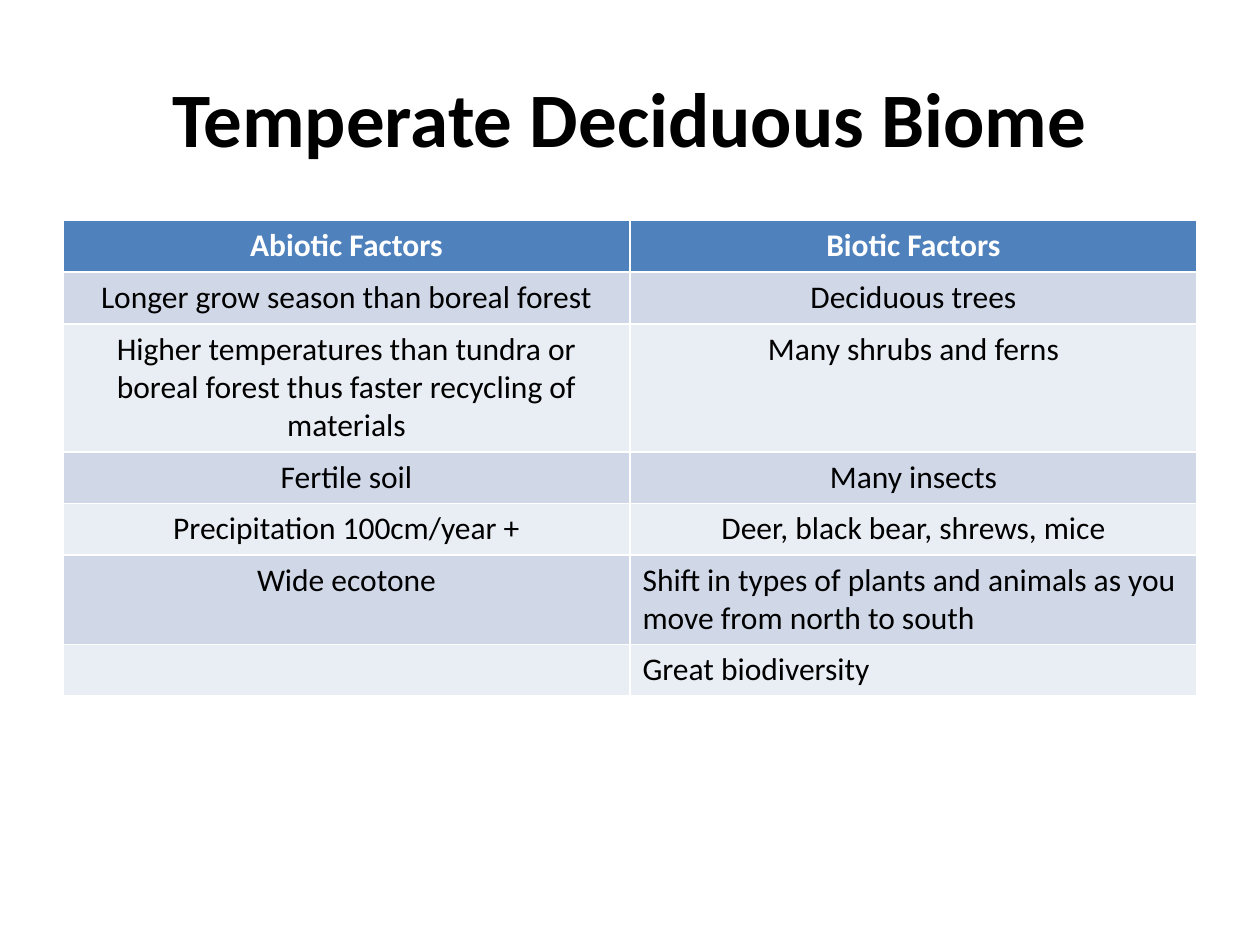
from pptx import Presentation
from pptx.dml.color import RGBColor
from pptx.enum.text import MSO_ANCHOR, PP_ALIGN
from pptx.util import Inches, Pt

TITLE = "Temperate Deciduous Biome"
HEADER = ("Abiotic Factors", "Biotic Factors")
FACTORS = [
    ("Longer grow season than boreal forest", "Deciduous trees"),
    ("Higher temperatures than tundra or boreal forest thus faster recycling of materials",
     "Many shrubs and ferns"),
    ("Fertile soil", "Many insects"),
    ("Precipitation 100cm/year +", "Deer, black bear, shrews, mice"),
    ("Wide ecotone", "Shift in types of plants and animals as you move from north to south"),
    ("", "Great biodiversity"),
]
LEFT_ALIGNED = FACTORS[-2][1], FACTORS[-1][1]

FONT = "Calibri"
BLACK = RGBColor(0x00, 0x00, 0x00)
WHITE = RGBColor(0xFF, 0xFF, 0xFF)
HEADER_BLUE = RGBColor(0x4F, 0x81, 0xBD)
BANDS = RGBColor(0xE9, 0xED, 0xF4), RGBColor(0xD0, 0xD8, 0xE8)

LEFT, WIDTH = Inches(0.5), Inches(9)
ROW_HEIGHT = Inches(0.41)


def format_paragraph(p, size, color, bold, align):
    p.alignment = align
    # An empty cell has no run, so its size is set on the paragraph.
    for font in [r.font for r in p.runs] or [p.font]:
        font.name = FONT
        font.size = Pt(size)
        font.bold = bold
        font.color.rgb = color


def add_title(slide):
    title = slide.shapes.title
    title.left, title.top = LEFT, Inches(0.3)
    title.width, title.height = WIDTH, Inches(1.25)
    tf = title.text_frame
    tf.text = TITLE
    tf.vertical_anchor = MSO_ANCHOR.MIDDLE
    format_paragraph(tf.paragraphs[0], 44, BLACK, True, PP_ALIGN.CENTER)


def add_factor_table(slide):
    rows = [HEADER, *FACTORS]
    # The default table style supplies the white cell borders.
    table = slide.shapes.add_table(len(rows), len(HEADER), LEFT, Inches(1.75),
                                   WIDTH, ROW_HEIGHT * len(rows)).table
    for i, row in enumerate(rows):
        is_header = i == 0
        for j, text in enumerate(row):
            cell = table.cell(i, j)
            cell.text = text
            cell.fill.solid()
            cell.fill.fore_color.rgb = HEADER_BLUE if is_header else BANDS[i % 2]
            align = PP_ALIGN.LEFT if text in LEFT_ALIGNED else PP_ALIGN.CENTER
            format_paragraph(cell.text_frame.paragraphs[0], 18,
                             WHITE if is_header else BLACK, is_header, align)


def main():
    prs = Presentation()
    prs.slide_width, prs.slide_height = Inches(10), Inches(7.5)
    slide = prs.slides.add_slide(prs.slide_layouts[5])
    add_title(slide)
    add_factor_table(slide)
    prs.save("out.pptx")


if __name__ == "__main__":
    main()
